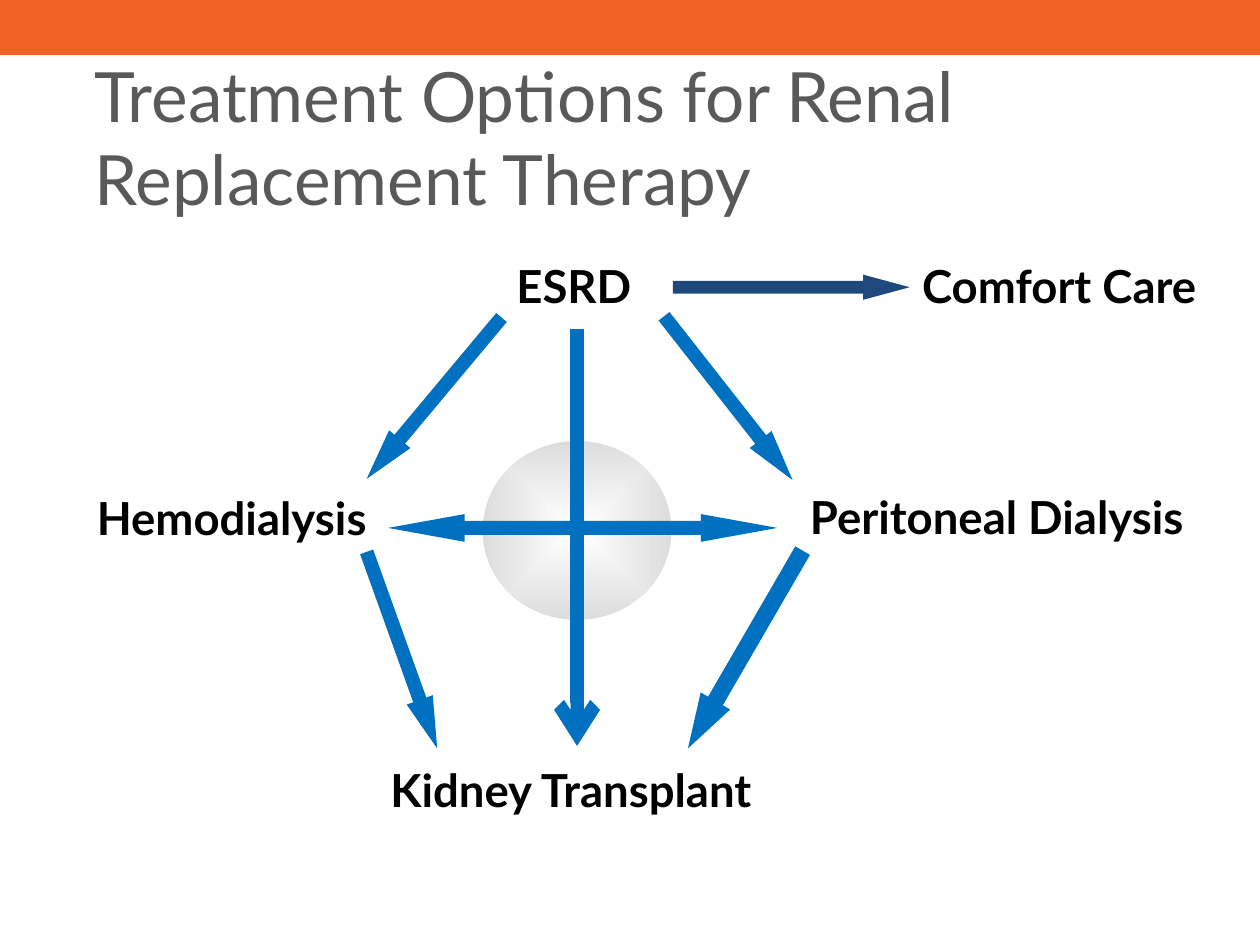
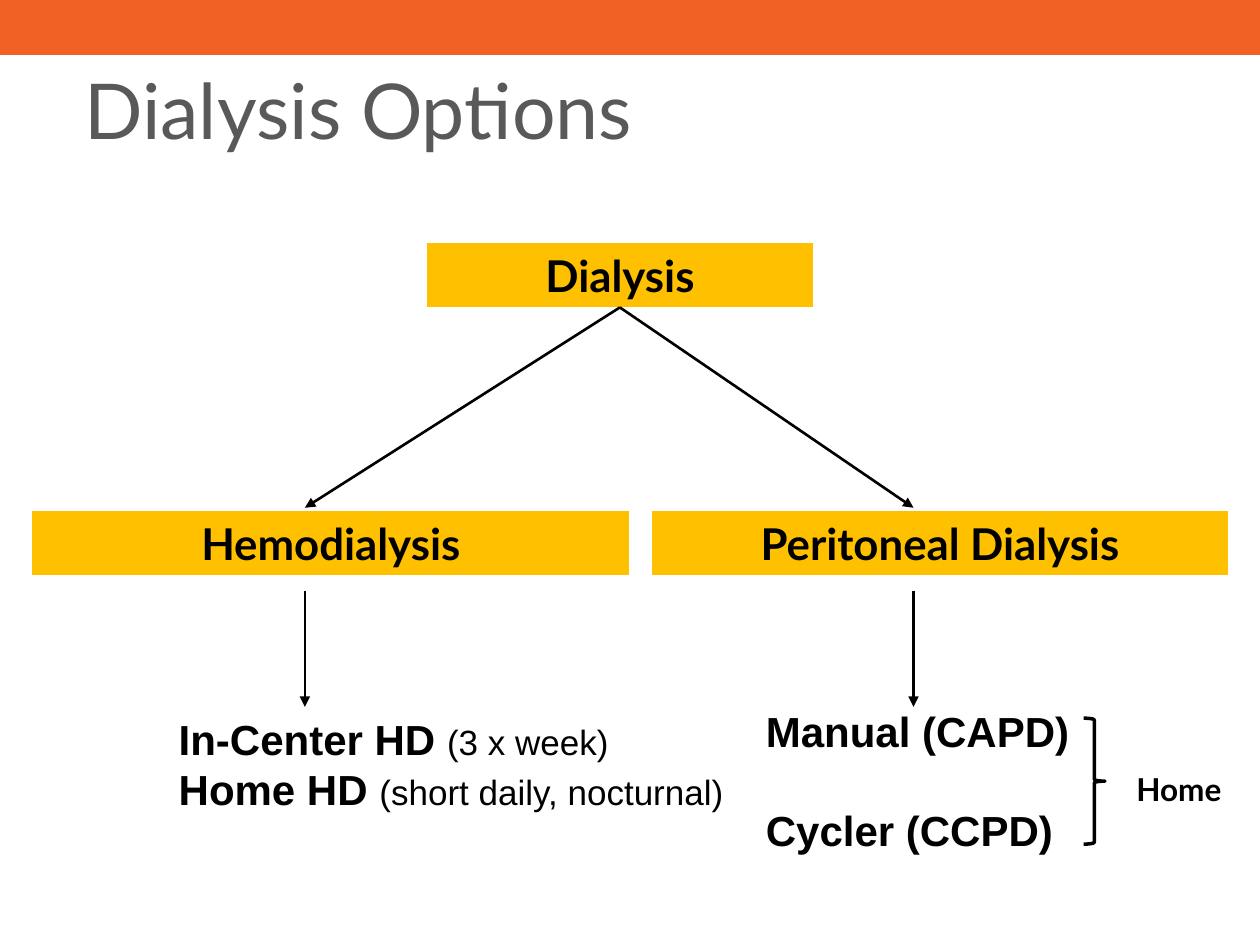
import math

import lxml.etree
import pptx
import pptx.dml.color
import pptx.enum.shapes
import pptx.enum.text
import pptx.oxml.ns
import pptx.util

PX = 9144  # EMU in one px, 100 px to the inch
SHAPE = pptx.enum.shapes.MSO_SHAPE
ALIGN = pptx.enum.text.PP_ALIGN
ANCHOR = pptx.enum.text.MSO_ANCHOR

BLACK, WHITE, GREY = "000000", "FFFFFF", "595959"
ORANGE, GOLD = "F16025", "FFC000"
BLUE, NAVY = "0070C0", "1F497D"


def emu(*sizes):
    return [round(size * PX) for size in sizes]


def rgb(code):
    return pptx.dml.color.RGBColor.from_string(code)


def sub(parent, tag, **attrs):
    return lxml.etree.SubElement(parent, pptx.oxml.ns.qn(tag), attrs)


def style(run, size, color=BLACK, bold=True, face="Lato"):
    run.font.name = face
    run.font.size = pptx.util.Pt(size)
    run.font.bold = bold
    run.font.color.rgb = rgb(color)


def shape(slide, kind, box, fill=None, line=None, width=1):
    item = slide.shapes.add_shape(kind, *emu(*box))
    item.shadow.inherit = False
    if fill:
        item.fill.solid()
        item.fill.fore_color.rgb = rgb(fill)
    else:
        item.fill.background()
    if line:
        item.line.color.rgb = rgb(line)
        item.line.width = pptx.util.Pt(width)
    else:
        item.line.fill.background()
    return item


def label(slide, box, text, size=26):
    frame = slide.shapes.add_textbox(*emu(*box)).text_frame
    frame.word_wrap = False
    frame.text = text
    style(frame.paragraphs[0].runs[0], size)


def items(slide, box, rows, gap=0):
    """Each row is a bold name and a plain note, which may be empty."""
    frame = slide.shapes.add_textbox(*emu(*box)).text_frame
    frame.word_wrap = True
    for i, (name, note) in enumerate(rows):
        para = frame.add_paragraph() if i else frame.paragraphs[0]
        para.text = name
        style(para.runs[0], 24, face="Arial")
        if i:
            para.space_before = pptx.util.Pt(gap)
        if note:
            run = para.add_run()
            run.text = note
            style(run, 20, bold=False, face="Arial")


def block(slide, start, tip, thick, head, color=BLUE):
    """Block arrow from start to tip; head is its length over its height."""
    (x1, y1), (x2, y2) = start, tip
    size = math.dist(start, tip)
    box = ((x1 + x2 - size) / 2, (y1 + y2 - thick) / 2, size, thick)
    item = shape(slide, SHAPE.RIGHT_ARROW, box, color)
    item.adjustments[1] = head
    item.rotation = math.degrees(math.atan2(y2 - y1, x2 - x1))


def line(slide, start, tip, color=BLACK, width=1.5, head="triangle"):
    kind = pptx.enum.shapes.MSO_CONNECTOR.STRAIGHT
    item = slide.shapes.add_connector(kind, *emu(*start, *tip))
    item.line.color.rgb = rgb(color)
    item.line.width = pptx.util.Pt(width)
    sub(item.line._get_or_add_ln(), "a:tailEnd", type=head)
    sub(item._element.spPr, "a:effectLst")


def page(deck, title, box, size):
    """Slide with the top band and a title."""
    slide = deck.slides.add_slide(deck.slide_layouts[5])
    shape(slide, SHAPE.RECTANGLE, (0, 0, 1000, 42), ORANGE, ORANGE, 2)
    head = slide.shapes.title
    head.left, head.top, head.width, head.height = emu(*box)
    frame = head.text_frame
    frame.text = title
    frame.word_wrap = True
    frame.auto_size = pptx.enum.text.MSO_AUTO_SIZE.NONE
    frame.vertical_anchor = ANCHOR.TOP
    frame.margin_left = frame.margin_right = 0
    frame.margin_top = frame.margin_bottom = 0
    frame.paragraphs[0].alignment = ALIGN.LEFT
    style(frame.paragraphs[0].runs[0], size, GREY, False)
    return slide


def ball(slide, box):
    """Ellipse shaded from a white centre."""
    item = shape(slide, SHAPE.OVAL, box, WHITE)
    item.fill.gradient()
    for stop, color in zip(item.fill.gradient_stops, (WHITE, "DDDDDD")):
        stop.color.rgb = rgb(color)
    grad = item._element.spPr.find(pptx.oxml.ns.qn("a:gradFill"))
    grad.remove(grad.find(pptx.oxml.ns.qn("a:lin")))
    shade = sub(grad, "a:path", path="shape")
    sub(shade, "a:fillToRect", **dict.fromkeys("ltrb", "50000"))


def wheel(slide, x, y):
    """Four linked treatments around a ball, with comfort care aside."""
    def at(dx, dy):
        return x + dx, y + dy

    ball(slide, (*at(316, 150), 150, 142))

    # Labels
    for dx, dy, width, text in (
        (333, 0, 122, "ESRD"),
        (0, 184, 256, "Hemodialysis"),
        (233, 400, 337, "Kidney Transplant"),
        (566, 183, 345, "Peritoneal Dialysis"),
        (655, 0, 253, "Comfort Care"),
    ):
        label(slide, (*at(dx, dy), width, 54), text)

    # Outer arrows
    for start, tip, thick, head in (
        ((460, 51), (562, 181), 22, 1.86),
        ((331, 52), (224, 180), 22, 1.86),
        ((224, 238), (280, 394), 22, 1.86),
        ((570, 237), (479, 394), 27, 1.61),
    ):
        block(slide, at(*start), at(*tip), thick, head)
    block(slide, at(467, 28), at(655, 28), 20, 1.85, NAVY)

    # Cross in the middle
    bar = shape(slide, SHAPE.LEFT_RIGHT_ARROW, (*at(241, 208), 309, 22), BLUE)
    bar.adjustments[1] = 2.76
    line(slide, at(391, 61), at(391, 392), BLUE, 7.5, "arrow")


def node(slide, box, text):
    frame = shape(slide, SHAPE.RECTANGLE, box, GOLD, WHITE, 0.75).text_frame
    frame.text = text
    frame.vertical_anchor = ANCHOR.MIDDLE
    frame.paragraphs[0].alignment = ALIGN.CENTER
    style(frame.paragraphs[0].runs[0], 25)


def tree(slide, x, y):
    """Dialysis split into two kinds, each with an arrow to its choices."""
    node(slide, (x + 313, y, 308, 52), "Dialysis")
    for dx, width, stem, text in (
        (0, 475, 217, "Hemodialysis"),
        (492, 458, 700, "Peritoneal Dialysis"),
    ):
        node(slide, (x + dx, y + 213, width, 52), text)
        line(slide, (x + 467, y + 52), (x + stem, y + 211))
        line(slide, (x + stem, y + 277), (x + stem, y + 369))


def picks(slide, x, y):
    """Choices below the tree, with a brace around those done at home."""
    items(slide, (x, y + 6, 526, 91), (
        ("In-Center HD ", "(3 x week)"),
        ("Home HD ", "(short daily, nocturnal)"),
    ))
    items(slide, (x + 466, y, 279, 131),
          (("Manual (CAPD)", ""), ("Cycler (CCPD)", "")), gap=28)
    brace = shape(slide, SHAPE.RIGHT_BRACE, (x + 728, y + 15, 17, 100),
                  line=BLACK, width=2)
    brace.adjustments[0] = 0.08
    label(slide, (x + 760, y + 51, 92, 40), "Home", 18)


def main():
    deck = pptx.Presentation()
    deck.slide_width, deck.slide_height = emu(1000, 750)

    slide = page(deck, "Treatment Options for Renal Replacement Therapy",
                 (75, 42, 812, 92), 39.6)
    wheel(slide, 67, 200)

    slide = page(deck, "Dialysis Options", (67, 50, 850, 125), 44)
    tree(slide, 25, 192)
    picks(slide, 132, 555)

    deck.save("out.pptx")


if __name__ == "__main__":
    main()
